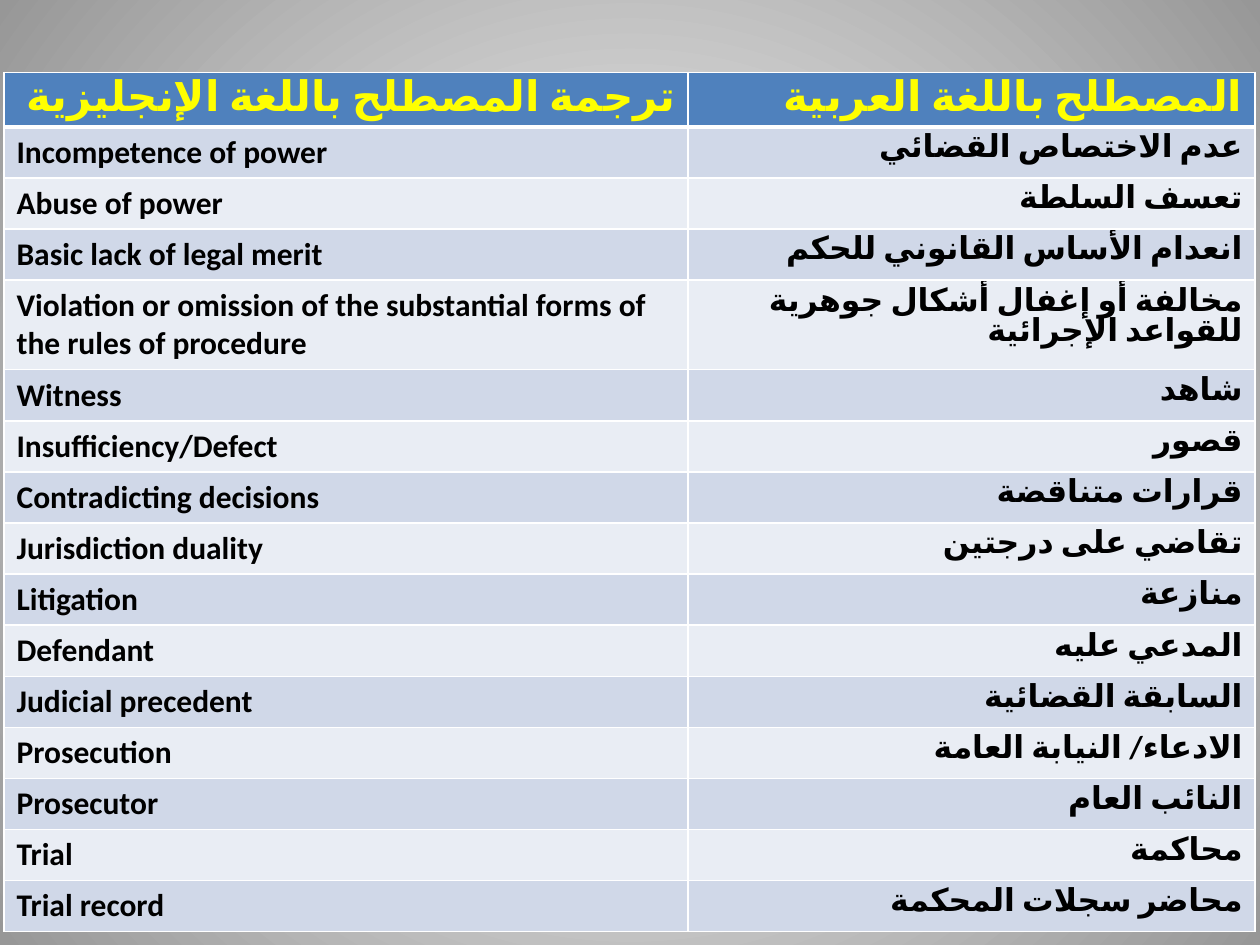
import pptx
import pptx.util
import pptx.dml.color
import pptx.enum.lang
import pptx.enum.text
import pptx.oxml
import pptx.oxml.ns
import lxml.etree

Pt = pptx.util.Pt
RGB = pptx.dml.color.RGBColor
ALIGN = pptx.enum.text.PP_ALIGN
ARABIC = pptx.enum.lang.MSO_LANGUAGE_ID.ARABIC
NS = pptx.oxml.ns.nsdecls("a")
FACE = "Calibri"

WHITE = RGB(0xFF, 0xFF, 0xFF)
GRAY = RGB(0x97, 0x97, 0x97)
BLACK = RGB(0, 0, 0)
YELLOW = RGB(0xFF, 0xFF, 0)
BLUE = RGB(0x4F, 0x81, 0xBD)
BANDS = [RGB(0xE9, 0xED, 0xF4), RGB(0xD0, 0xD8, 0xE8)]

TERMS = [
    ("ترجمة المصطلح باللغة الإنجليزية", "المصطلح باللغة العربية"),
    ("Incompetence of power", "عدم الاختصاص القضائي"),
    ("Abuse of power", "تعسف السلطة"),
    ("Basic lack of legal merit", "انعدام الأساس القانوني للحكم"),
    ("Violation or omission of the substantial forms of the rules of procedure",
     "مخالفة أو إغفال أشكال جوهرية للقواعد الإجرائية"),
    ("Witness", "شاهد"),
    ("Insufficiency/Defect", "قصور"),
    ("Contradicting decisions", "قرارات متناقضة"),
    ("Jurisdiction duality", "تقاضي على درجتين"),
    ("Litigation", "منازعة"),
    ("Defendant", "المدعي عليه"),
    ("Judicial precedent", "السابقة القضائية"),
    ("Prosecution", "الادعاء/ النيابة العامة"),
    ("Prosecutor", "النائب العام"),
    ("Trial", "محاكمة"),
    ("Trial record", "محاضر سجلات المحكمة"),
]
WIDTHS = [391, 324]
LEFT, TOP = 2.3, 41.3
HEAD, LINE, TALL = 31.2, 29.2, 51.2
LONG = 50


def shade(slide):
    fill = slide.background.fill
    fill.gradient()
    for stop, color in zip(fill.gradient_stops, (WHITE, GRAY)):
        stop.color.rgb = color
    fill.gradient_stops[0].position = 0
    fill.gradient_stops[1].position = 1
    grad = slide.background._cSld.bg.bgPr.find(pptx.oxml.ns.qn("a:gradFill"))
    lin = grad.find(pptx.oxml.ns.qn("a:lin"))
    grad.replace(lin, pptx.oxml.parse_xml(
        f'<a:path {NS} path="circle"><a:fillToRect l="50000" t="50000" '
        'r="50000" b="50000"/></a:path>'))


def edge(cell, head, below):
    props = cell._tc.get_or_add_tcPr()
    sizes = {"L": 1, "R": 1, "T": 3 if below else 1, "B": 3 if head else 1}
    for spot, (side, size) in enumerate(sizes.items()):
        props.insert(spot, pptx.oxml.parse_xml(
            f'<a:ln{side} {NS} w="{Pt(size)}"><a:solidFill>'
            f'<a:srgbClr val="{WHITE}"/></a:solidFill></a:ln{side}>'))


def write(cell, text, head, arab):
    cell.text = text
    para = cell.text_frame.paragraphs[0]
    font = para.font
    font.name = FACE
    font.size = Pt(24 if head else 18)
    font.bold = True
    font.color.rgb = YELLOW if head else BLACK
    if arab:
        para.alignment = ALIGN.RIGHT
        para.line_spacing = 0.8
        props = para._p.get_or_add_pPr()
        props.set("rtl", "1")
        para.runs[0].font.language_id = ARABIC
        lxml.etree.SubElement(
            props.find(pptx.oxml.ns.qn("a:defRPr")),
            pptx.oxml.ns.qn("a:cs"), typeface=FACE)


def main():
    deck = pptx.Presentation()
    deck.slide_width, deck.slide_height = Pt(720), Pt(540)
    slide = deck.slides.add_slide(deck.slide_layouts[6])
    shade(slide)
    highs = [HEAD] + [TALL if len(eng) > LONG else LINE for eng, _ in TERMS[1:]]
    table = slide.shapes.add_table(
        len(TERMS), len(WIDTHS), Pt(LEFT), Pt(TOP),
        Pt(sum(WIDTHS)), Pt(sum(highs))).table
    for col, width in zip(table.columns, WIDTHS):
        col.width = Pt(width)
    for row, (pair, high) in enumerate(zip(TERMS, highs)):
        table.rows[row].height = Pt(high)
        head = row == 0
        for col, text in enumerate(pair):
            cell = table.cell(row, col)
            write(cell, text, head, head or col == 1)
            cell.fill.solid()
            cell.fill.fore_color.rgb = BLUE if head else BANDS[row % 2]
            edge(cell, head, row == 1)
    deck.save("out.pptx")


if __name__ == "__main__":
    main()
